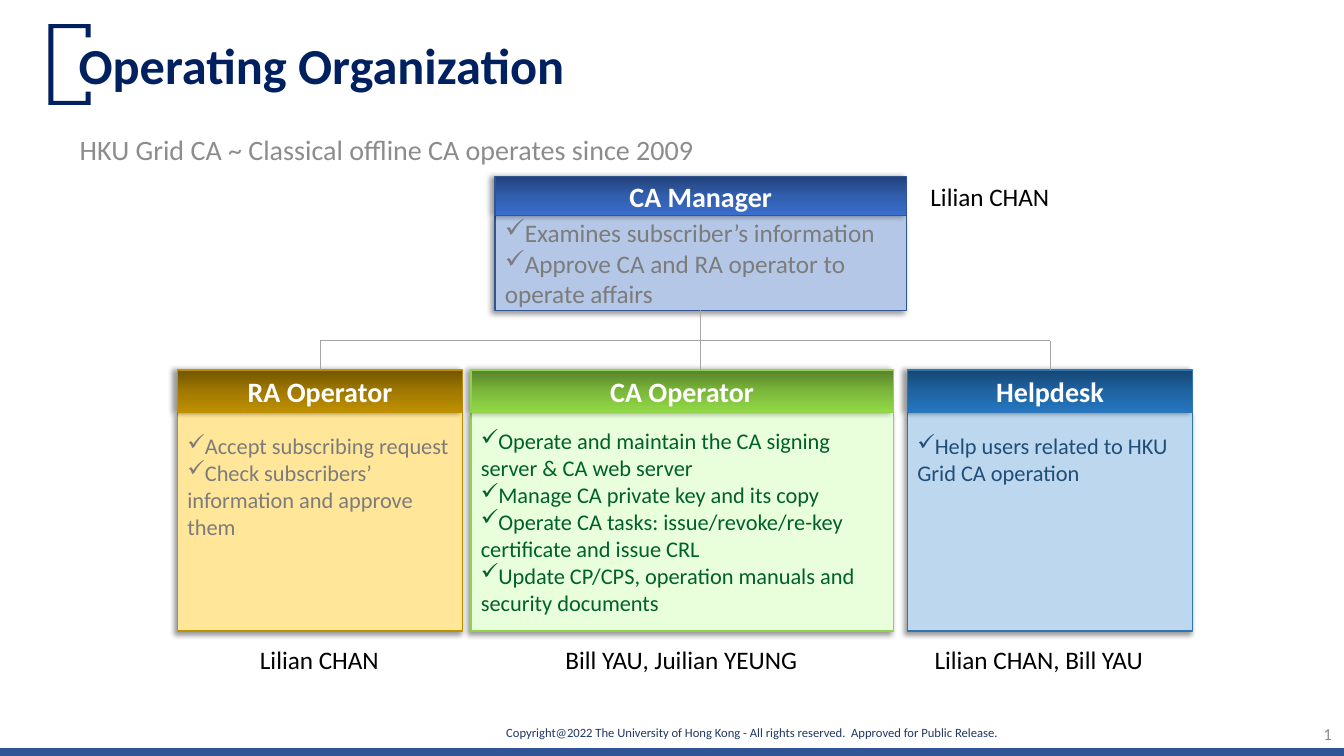
from copy import deepcopy
from dataclasses import dataclass

from lxml.etree import SubElement
from pptx import Presentation
from pptx.dml.color import RGBColor
from pptx.enum.shapes import MSO_CONNECTOR, MSO_SHAPE
from pptx.enum.text import MSO_ANCHOR, MSO_AUTO_SIZE, PP_ALIGN
from pptx.oxml.ns import qn
from pptx.util import Inches, Pt

# Content
TITLE = "Operating Organization"
SUBTITLE = "HKU Grid CA ~ Classical offline CA operates since 2009"
COPYRIGHT = ("Copyright@2022 The University of Hong Kong - All rights reserved.  "
             "Approved for Public Release.")
PAGE_NUMBER = "1"
MANAGER = dict(
    name="CA Manager", left=4.91, width=4.08, palette="manager",
    duties=["Examines subscriber’s information",
            "Approve CA and RA operator to operate affairs"])
TEAMS = [
    dict(name="RA Operator", left=1.76, width=2.83, palette="ra", from_top=True,
         duties=["Accept subscribing request",
                 "Check subscribers’ information and approve them"]),
    dict(name="CA Operator", left=4.67, width=4.19, palette="ca",
         duties=["Operate and maintain the CA signing server & CA web server",
                 "Manage CA private key and its copy",
                 "Operate CA tasks: issue/revoke/re-key certificate and issue CRL",
                 "Update CP/CPS, operation manuals and security documents"]),
    dict(name="Helpdesk", left=9, width=2.83, palette="helpdesk", from_top=True,
         duties=["Help users related to HKU Grid CA operation"]),
]
# text, left, top, width
PEOPLE = [
    ("Lilian CHAN", 2.48, 6.34, 1.4),
    ("Lilian CHAN", 9.13, 1.75, 1.4),
    ("Bill YAU, Juilian YEUNG", 5.51, 6.34, 2.52),
    ("Lilian CHAN, Bill YAU", 9.17, 6.34, 2.49),
]
BRACKET = [(0.48, 0.24), (0.9, 0.24), (0.9, 0.37), (0.85, 0.37), (0.85, 0.28), (0.53, 0.28),
           (0.53, 1), (0.85, 1), (0.85, 0.91), (0.9, 0.91), (0.9, 1.04), (0.48, 1.04)]
BUS_TOP = 3.38


@dataclass(frozen=True)
class Palette:
    fill: str
    edge: str
    text: str
    gradient: tuple


class Theme:
    font = "Calibri"
    navy, copyright, footer_bar = "002060", "203864", "2F5597"
    grey, black, white, connector = "8C8C8C", "000000", "FFFFFF", "A5A5A5"
    title, heading, large, duty, number, small = 36, 20, 18, 16, 12, 9
    palettes = {
        "manager": Palette("B4C7E7", "325491", "7C7C7C", ("23427A", "315EAD", "3A6FCE")),
        "ra": Palette("FFE699", "BF9000", "7C7C7C", ("715500", "A17900", "BF9000")),
        "ca": Palette("E9FEDA", "92D050", "00602B", ("57812A", "7BB73B", "92DA46")),
        "helpdesk": Palette("BDD7EE", "2E75B6", "1F4E79", ("164672", "1F63A2", "2476C0")),
    }


def rgb(value):
    return RGBColor.from_string(value)


def write(shape, lines, size, color, bold=False, align=PP_ALIGN.LEFT, anchor=MSO_ANCHOR.MIDDLE,
          bullet=None, spacing=None, wrap=True, margins=(0.1, 0.05, 0.1, 0.05)):
    frame = shape.text_frame
    frame.word_wrap = wrap
    frame.auto_size = MSO_AUTO_SIZE.NONE
    frame.vertical_anchor = anchor
    (frame.margin_left, frame.margin_top,
     frame.margin_right, frame.margin_bottom) = map(Inches, margins)
    for index, line in enumerate(lines):
        para = frame.paragraphs[0] if index == 0 else frame.add_paragraph()
        properties = para._p.get_or_add_pPr()
        properties.set("marL", "0")
        properties.set("indent", "0")
        if bullet:
            SubElement(properties, qn("a:buChar")).set("char", bullet)
        else:
            SubElement(properties, qn("a:buNone"))
        para.alignment = align
        para.space_before = Pt(0)
        if spacing:
            para.line_spacing = spacing
        span = para.add_run()
        span.text = line
        span.font.name, span.font.size, span.font.bold = Theme.font, Pt(size), bold
        span.font.color.rgb = rgb(color)


def place(shape, left, top, width, height):
    shape.left, shape.top = Inches(left), Inches(top)
    shape.width, shape.height = Inches(width), Inches(height)
    return shape


def add_text(page, text, left, top, width, height, **style):
    box = page.shapes.add_textbox(*map(Inches, (left, top, width, height)))
    write(box, [text], **style)


def add_line(page, start, end, color, weight):
    line = page.shapes.add_connector(MSO_CONNECTOR.STRAIGHT, *map(Inches, start + end))
    line.line.color.rgb = rgb(color)
    line.line.width = Pt(weight)
    SubElement(line._element.spPr, qn("a:effectLst"))
    return line


def add_panel(page, left, top, width, height, edge, shadow_angle):
    panel = page.shapes.add_shape(MSO_SHAPE.RECTANGLE, *map(Inches, (left, top, width, height)))
    panel.line.color.rgb = rgb(edge)
    panel.line.width = Pt(1)
    panel.shadow.inherit = False
    effects = panel._element.spPr.find(qn("a:effectLst"))
    shadow = SubElement(effects, qn("a:outerShdw"), blurRad=str(Pt(4)), dist=str(Pt(3)),
                        dir=str(shadow_angle * 60000), algn="tr", rotWithShape="0")
    tint = SubElement(shadow, qn("a:srgbClr"), val=Theme.black)
    SubElement(tint, qn("a:alpha"), val="40000")
    return panel


def fill_gradient(shape, colors):
    shape.fill.gradient()
    shape.fill.gradient_angle = 270
    stop_list = shape._element.spPr.find(qn("a:gradFill")).find(qn("a:gsLst"))
    stop_list.append(deepcopy(stop_list[-1]))
    for stop, color, position in zip(shape.fill.gradient_stops, colors, (0, 0.5, 1)):
        stop.color.rgb = rgb(color)
        stop.position = position


def add_role(page, role, top, header_height, body_height, size):
    palette = Theme.palettes[role["palette"]]
    left, width = role["left"], role["width"]
    body = add_panel(page, left, top + header_height, width, body_height, palette.edge, 135)
    body.fill.solid()
    body.fill.fore_color.rgb = rgb(palette.fill)
    layout = {}
    if role.get("from_top"):
        layout = dict(anchor=MSO_ANCHOR.TOP, margins=(0.1, 0.2, 0.1, 0.05))
    write(body, role["duties"], size, palette.text, bullet="✓", **layout)
    header = add_panel(page, left, top, width, header_height, palette.edge, 180)
    fill_gradient(header, palette.gradient)
    write(header, [role["name"]], Theme.heading, Theme.white, bold=True, align=PP_ALIGN.CENTER)
    return header, body


def center(role):
    return role["left"] + role["width"] / 2


def main():
    deck = Presentation()
    deck.slide_width, deck.slide_height = Inches(13.33), Inches(7.5)
    page = deck.slides.add_slide(deck.slide_layouts[1])

    # Footer
    add_text(page, COPYRIGHT, 5.02, 7.1, 4.91, 0.33, size=Theme.small,
             color=Theme.copyright, margins=(0, 0, 0, 0))
    add_line(page, (0, 7.46), (13.33, 7.46), Theme.footer_bar, 6)
    add_text(page, PAGE_NUMBER, 10.31, 7.08, 3, 0.4, size=Theme.number,
             color=Theme.grey, align=PP_ALIGN.RIGHT)

    # Title, bracket and subtitle
    title = place(page.shapes.title, 0.68, 0.22, 9.33, 0.91)
    write(title, [TITLE], Theme.title, Theme.navy, bold=True, spacing=0.9)
    corners = [(Inches(x), Inches(y)) for x, y in BRACKET]
    outline = page.shapes.build_freeform(*corners[0])
    outline.add_line_segments(corners[1:], close=True)
    bracket = outline.convert_to_shape()
    bracket.shadow.inherit = False
    bracket.fill.solid()
    bracket.fill.fore_color.rgb = rgb(Theme.navy)
    bracket.line.fill.background()
    subtitle = place(page.placeholders[1], 0.69, 1.3, 9, 0.44)
    write(subtitle, [SUBTITLE], Theme.heading, Theme.grey, anchor=MSO_ANCHOR.TOP, spacing=0.9)

    # Roles
    manager_body = add_role(page, MANAGER, 1.75, 0.39, 0.94, Theme.large)[1]
    headers = [add_role(page, team, 3.67, 0.42, 2.17, Theme.duty)[0] for team in TEAMS]

    # Reporting lines
    connector = dict(color=Theme.connector, weight=0.5)
    middle = center(MANAGER)
    trunk = add_line(page, (middle, 3.08), (middle, 3.67), **connector)
    trunk.begin_connect(manager_body, 2)
    add_line(page, (center(TEAMS[0]), BUS_TOP), (center(TEAMS[-1]), BUS_TOP), **connector)
    for team, header in ((TEAMS[0], headers[0]), (TEAMS[-1], headers[-1])):
        drop = add_line(page, (center(team), BUS_TOP), (center(team), 3.67), **connector)
        drop.end_connect(header, 0)

    # People
    for text, left, top, width in PEOPLE:
        add_text(page, text, left, top, width, 0.4, size=Theme.large, color=Theme.black,
                 anchor=MSO_ANCHOR.TOP, wrap=False)

    deck.save("out.pptx")


if __name__ == "__main__":
    main()
